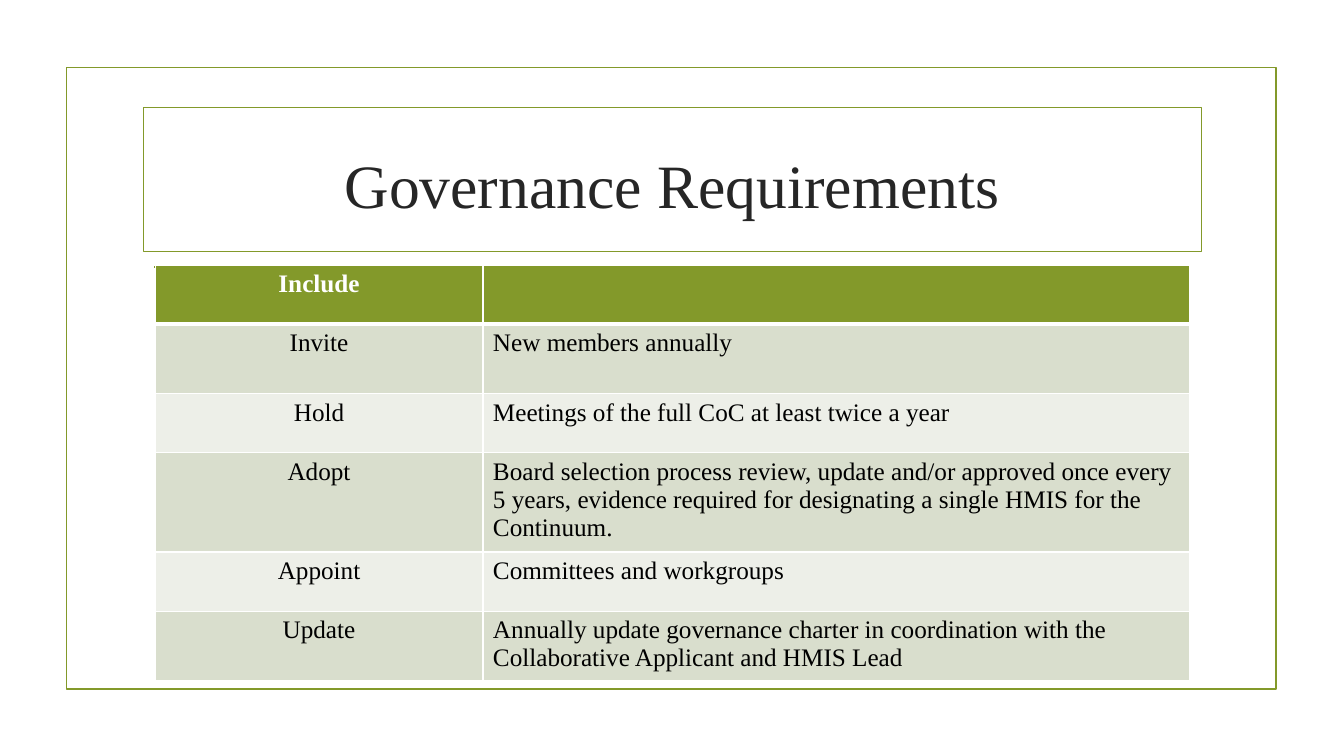
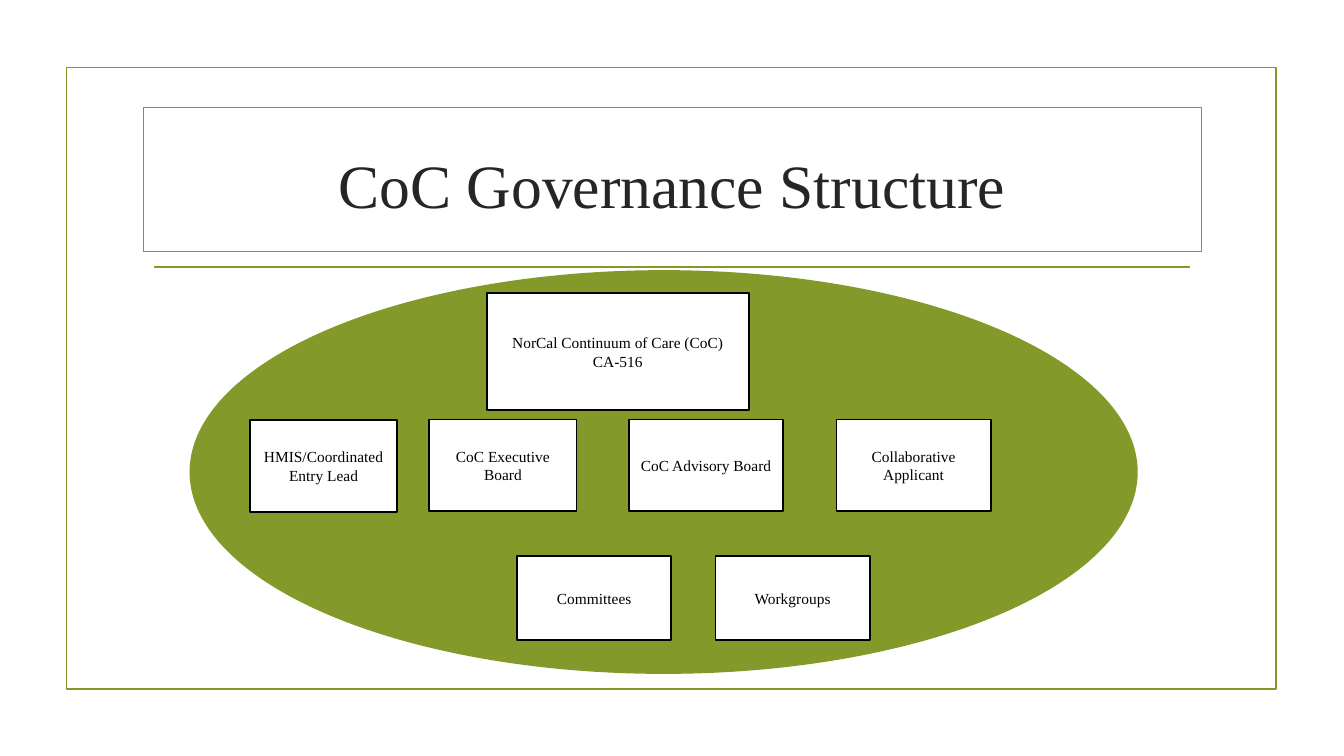
from lxml import etree
from pptx import Presentation
from pptx.dml.color import RGBColor
from pptx.enum import shapes, text
from pptx.oxml.ns import qn
from pptx.util import Cm, Pt

COLORS = {
    "green": "83992A",
    "band_dark": "D9DECD",
    "band_light": "EDEFE8",
    "title": "262626",
    "black": "000000",
    "white": "FFFFFF",
}
FONT = "Times New Roman"
TITLE_ONLY = 5
CENTER = text.PP_ALIGN.CENTER
LEFT = text.PP_ALIGN.LEFT
RECT = shapes.MSO_SHAPE.RECTANGLE
OVAL = shapes.MSO_SHAPE.OVAL

REQUIREMENTS = [
    ("Include", "", 1.49),
    ("Invite", "New members annually", 1.75),
    ("Hold", "Meetings of the full CoC at least twice a year", 1.49),
    ("Adopt", "Board selection process review, update and/or approved once every "
     "5 years, evidence required for designating a single HMIS for the Continuum.", 2.5),
    ("Appoint", "Committees and workgroups", 1.49),
    ("Update", "Annually update governance charter in coordination with the "
     "Collaborative Applicant and HMIS Lead", 1.75),
]
COLUMN_WIDTHS = (8.26, 17.81)

BODIES = [
    (("NorCal Continuum of Care (CoC)", "CA-516"), 12.27, 7.39, 6.6, 2.95),
    (("HMIS/Coordinated Entry Lead",), 6.3, 10.59, 3.71, 2.31),
    (("CoC Executive Board",), 10.82, 10.57, 3.71, 2.31),
    (("CoC Advisory Board",), 15.85, 10.57, 3.89, 2.31),
    (("Collaborative Applicant",), 21.08, 10.57, 3.89, 2.31),
    (("Committees",), 13.03, 14.02, 3.89, 2.11),
    (("Workgroups",), 18.03, 14.02, 3.89, 2.11),
]


def rgb(name):
    return RGBColor.from_string(COLORS[name])


def write(tf, *lines, size=18, color="black", bold=False, align=CENTER):
    for i, line in enumerate(lines):
        p = tf.paragraphs[0] if i == 0 else tf.add_paragraph()
        p.alignment = align
        r = p.add_run()
        r.text = line
        r.font.name = FONT
        r.font.size = Pt(size)
        r.font.bold = bold
        r.font.color.rgb = rgb(color)


def set_line(sp, color, width=1.25):
    sp.line.color.rgb = rgb(color)
    sp.line.width = Pt(width)


def add_shape(slide, kind, x, y, w, h, line, fill=None):
    sp = slide.shapes.add_shape(kind, Cm(x), Cm(y), Cm(w), Cm(h))
    sp.shadow.inherit = False
    if fill:
        sp.fill.solid()
        sp.fill.fore_color.rgb = rgb(fill)
    else:
        sp.fill.background()
    set_line(sp, line)
    return sp


def add_rule(slide, x1, x2, y):
    rule = slide.shapes.add_connector(
        shapes.MSO_CONNECTOR.STRAIGHT, Cm(x1), Cm(y), Cm(x2), Cm(y))
    set_line(rule, "green")
    etree.SubElement(rule._element.spPr, qn("a:effectLst"))


def add_titled_slide(prs, title):
    slide = prs.slides.add_slide(prs.slide_layouts[TITLE_ONLY])
    add_shape(slide, RECT, 1.68, 1.7, 30.48, 15.67, line="green")
    add_rule(slide, 3.89, 30, 6.73)
    sp = slide.shapes.title
    sp.left, sp.top, sp.width, sp.height = Cm(3.61), Cm(2.72), Cm(26.67), Cm(3.63)
    set_line(sp, "green", 0.75)
    tf = sp.text_frame
    tf.vertical_anchor = text.MSO_ANCHOR.MIDDLE
    tf.auto_size = text.MSO_AUTO_SIZE.NONE
    tf.margin_top = Cm(0.33)
    write(tf, title, size=44, color="title")
    return slide


def set_borders(cell, top=1, bottom=1):
    tcPr = cell._tc.get_or_add_tcPr()
    for side, width in (("L", 1), ("R", 1), ("T", top), ("B", bottom)):
        ln = etree.SubElement(tcPr, qn(f"a:ln{side}"), w=str(Pt(width)))
        fill = etree.SubElement(ln, qn("a:solidFill"))
        etree.SubElement(fill, qn("a:srgbClr"), val=COLORS["white"])


def add_requirements_table(slide, x, y):
    width = sum(COLUMN_WIDTHS)
    height = sum(row[-1] for row in REQUIREMENTS)
    table = slide.shapes.add_table(
        len(REQUIREMENTS), len(COLUMN_WIDTHS), Cm(x), Cm(y), Cm(width), Cm(height)).table
    for column, w in zip(table.columns, COLUMN_WIDTHS):
        column.width = Cm(w)
    for i, (action, detail, h) in enumerate(REQUIREMENTS):
        table.rows[i].height = Cm(h)
        header = i == 0
        band = "green" if header else "band_dark" if i % 2 else "band_light"
        for j, (content, align) in enumerate(((action, CENTER), (detail, LEFT))):
            cell = table.cell(i, j)
            set_borders(cell, top=3 if i == 1 else 1, bottom=3 if header else 1)
            cell.fill.solid()
            cell.fill.fore_color.rgb = rgb(band)
            if content:
                write(cell.text_frame, content, align=align, bold=header,
                      color="white" if header else "black")


def add_body_box(slide, lines, x, y, w, h):
    sp = add_shape(slide, RECT, x, y, w, h, line="black", fill="white")
    tf = sp.text_frame
    tf.word_wrap = True
    tf.vertical_anchor = text.MSO_ANCHOR.MIDDLE
    write(tf, *lines, size=11)


def main():
    prs = Presentation()
    prs.slide_width, prs.slide_height = Cm(33.87), Cm(19.05)

    slide = add_titled_slide(prs, "Governance Requirements")
    add_requirements_table(slide, 3.91, 6.68)

    slide = add_titled_slide(prs, "CoC Governance Structure")
    add_shape(slide, OVAL, 4.8, 6.83, 23.85, 10.13, line="green", fill="green")
    for body in BODIES:
        add_body_box(slide, *body)

    prs.save("out.pptx")


if __name__ == "__main__":
    main()
